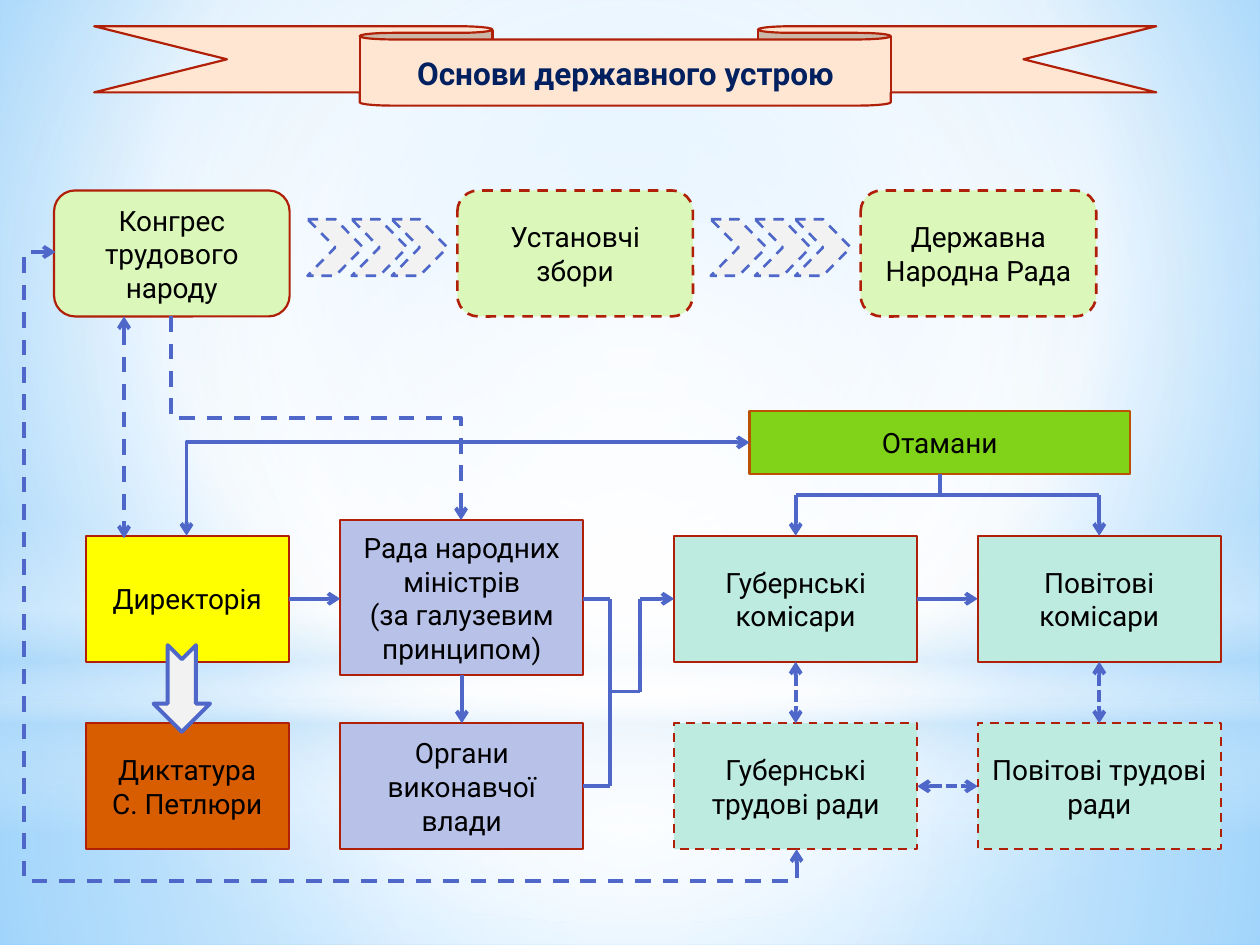
from dataclasses import dataclass
from typing import NamedTuple

from lxml import etree
from pptx import Presentation
from pptx.dml.color import RGBColor
from pptx.enum import dml, shapes, text
from pptx.oxml import ns
from pptx.util import Cm, Pt

FONT = "Roboto"
BLACK = RGBColor(0x00, 0x00, 0x00)
NAVY = RGBColor(0x00, 0x20, 0x60)
RED = RGBColor(0xB0, 0x1F, 0x07)
RUST = RGBColor(0xBB, 0x52, 0x03)
BLUE = RGBColor(0x4E, 0x67, 0xC8)
PEACH = RGBColor(0xFF, 0xE6, 0xD3)
LIME = RGBColor(0xDC, 0xF7, 0xBA)
GREEN = RGBColor(0x81, 0xD3, 0x1A)
YELLOW = RGBColor(0xFF, 0xFF, 0x00)
ORANGE = RGBColor(0xD8, 0x5C, 0x00)
LILAC = RGBColor(0xB8, 0xC2, 0xE9)
MINT = RGBColor(0xBE, 0xEB, 0xDF)
GREY = RGBColor(0xF2, 0xF2, 0xF2)
WHITE = RGBColor(0xFF, 0xFF, 0xFF)
ICE = RGBColor(0xB4, 0xDC, 0xFA)
SKY = RGBColor(0x9E, 0xD5, 0xFF)
AZURE = RGBColor(0x5B, 0xB9, 0xFF)

FORM = shapes.MSO_SHAPE
RECT, ROUND = FORM.RECTANGLE, FORM.ROUNDED_RECTANGLE
DASH, DOTS = dml.MSO_LINE.DASH, dml.MSO_LINE.SQUARE_DOT
MID = (50, 50, 50, 50)

# Chart grid, in cm
TOP, STEP = 3.84, 8.13
COLS = (1.73, 6.86, 13.59, 19.71)
ROWS = (10.8, 14.58)
WIDE, HIGH = 4.9, 2.54
MIDS = [x + WIDE / 2 for x in COLS]
ROW1, ROW2 = [y + HIGH / 2 for y in ROWS]
FORK = 9.98
JOIN, RISE, MERGE = 12.29, 12.9, 13.94


class Stop(NamedTuple):
    at: int
    color: RGBColor
    alpha: int = 100


@dataclass
class Box:
    words: str
    place: tuple
    fill: RGBColor
    form: int = RECT
    line: RGBColor = RED
    width: float = 1.25
    dash: int | None = None


@dataclass
class Link:
    start: tuple
    end: tuple
    ends: str = ""
    dash: int | None = None


@dataclass
class Elbow:
    """A bent link; place is its frame before it is turned."""
    kind: str
    place: tuple
    turn: int
    flip: str
    ends: str
    dash: int | None = None
    bends: tuple = ()


def blend(fill, root, stops: list, focus: tuple | None) -> None:
    """Give a fill a round gradient, or one that runs down if focus is None."""
    fill.solid()
    old = root.find(".//" + ns.qn("a:solidFill"))
    grad = etree.Element(ns.qn("a:gradFill"), rotWithShape="1")
    row = etree.SubElement(grad, ns.qn("a:gsLst"))
    for stop in stops:
        mark = etree.SubElement(row, ns.qn("a:gs"), pos=str(stop.at * 1000))
        tint = etree.SubElement(mark, ns.qn("a:srgbClr"), val=str(stop.color))
        if stop.alpha < 100:
            etree.SubElement(tint, ns.qn("a:alpha"), val=str(stop.alpha * 1000))
    if focus is None:
        etree.SubElement(grad, ns.qn("a:lin"), ang="5400000", scaled="0")
    else:
        way = etree.SubElement(grad, ns.qn("a:path"), path="circle")
        sides = {k: str(v * 1000) for k, v in zip("ltrb", focus)}
        etree.SubElement(way, ns.qn("a:fillToRect"), **sides)
    old.getparent().replace(old, grad)


def write(shape, words: str, size=16, color=BLACK, bold=False) -> None:
    frame = shape.text_frame
    frame.word_wrap = True
    frame.vertical_anchor = text.MSO_ANCHOR.MIDDLE
    frame.text = words
    for para in frame.paragraphs:
        para.alignment = text.PP_ALIGN.CENTER
        for run in para.runs:
            font = run.font
            font.name, font.size, font.bold = FONT, Pt(size), bold
            font.color.rgb = color


def stroke(line, color: RGBColor, width: float, dash=None) -> None:
    line.color.rgb = color
    line.width = Pt(width)
    if dash is not None:
        line.dash_style = dash


def add_box(slide, box: Box):
    shape = slide.shapes.add_shape(box.form, *map(Cm, box.place))
    shape.shadow.inherit = False
    shape.fill.solid()
    shape.fill.fore_color.rgb = box.fill
    stroke(shape.line, box.line, box.width, box.dash)
    if box.words:
        write(shape, box.words)
    return shape


def add_glow(slide, form, place: tuple, stops: list, focus=MID) -> None:
    shape = slide.shapes.add_shape(form, *map(Cm, place))
    shape.shadow.inherit = False
    shape.line.fill.background()
    blend(shape.fill, shape._element.spPr, stops, focus)


def add_link(slide, link: Link, kind=shapes.MSO_CONNECTOR.STRAIGHT):
    wire = slide.shapes.add_connector(kind, *map(Cm, link.start + link.end))
    stroke(wire.line, BLUE, 2.25, link.dash)
    line = wire.line._get_or_add_ln()
    for end in ("head", "tail"):
        if end in link.ends:
            etree.SubElement(line, ns.qn(f"a:{end}End"), type="arrow")
    etree.SubElement(wire._element.spPr, ns.qn("a:effectLst"))
    return wire


def add_elbow(slide, bend: Elbow) -> None:
    x, y, w, h = bend.place
    link = Link((x, y), (x + w, y + h), bend.ends, bend.dash)
    wire = add_link(slide, link, shapes.MSO_CONNECTOR.ELBOW)
    props = wire._element.spPr
    frame = props.find(ns.qn("a:xfrm"))
    frame.set("rot", str(bend.turn * 60000))
    frame.set(bend.flip, "1")
    geom = props.find(ns.qn("a:prstGeom"))
    geom.set("prst", bend.kind)
    guides = geom.find(ns.qn("a:avLst"))
    for n, value in enumerate(bend.bends, 1):
        etree.SubElement(guides, ns.qn("a:gd"), name=f"adj{n}", fmla=f"val {value}")


def add_ground(slide) -> None:
    blend(slide.background.fill, slide._element,
          [Stop(0, SKY), Stop(60, WHITE), Stop(100, AZURE)], (20, 10, 20, 60))
    add_glow(slide, RECT, (0, 14.17, 25.4, 4.88),
             [Stop(0, WHITE, 91), Stop(37, WHITE, 76), Stop(100, ICE, 79)])
    add_glow(slide, RECT, (0, 0, 25.4, 14.17),
             [Stop(0, WHITE, 89), Stop(48, WHITE, 62), Stop(100, ICE, 79)])
    add_glow(slide, RECT, (0, 10.46, 25.4, 6.35),
             [Stop(0, WHITE, 0), Stop(29, WHITE, 30), Stop(45, ICE, 40),
              Stop(55, WHITE, 26), Stop(65, ICE, 60), Stop(100, WHITE, 0)], None)
    add_glow(slide, FORM.OVAL, (0, 4.45, 25.4, 14.17),
             [Stop(0, WHITE), Stop(56, WHITE, 0)])


def add_title(slide) -> None:
    add_box(slide, Box("", (1.9, 0.53, 21.41, 1.6), PEACH, FORM.DOWN_RIBBON))
    title = slide.shapes.title
    title.left, title.top, title.width, title.height = map(Cm, (7.26, 0.8, 10.7, 1.33))
    write(title, "Основи державного устрою", size=18, color=NAVY, bold=True)
    slide.shapes._spTree.append(title._element)  # in front of the ribbon


BODIES = ("Конгрес трудового народу", "Установчі збори", "Державна Народна Рада")
BOXES = [
    Box(words, (1.09 + i * STEP, TOP, 4.75, HIGH), LIME, ROUND,
        width=1.5 if i else 1.25, dash=DASH if i else None)
    for i, words in enumerate(BODIES)
] + [
    Box("", (x + i * STEP, 4.42, 1.12, 1.14), GREY, FORM.CHEVRON, BLUE, 1.5, DASH)
    for i in range(2) for x in (6.2, 7.09, 7.9)
] + [
    Box("Директорія", (COLS[0], ROWS[0], 4.09, HIGH), YELLOW),
    Box("Диктатура\nС. Петлюри", (COLS[0], ROWS[1], 4.09, HIGH), ORANGE),
    Box("Рада народних міністрів\n(за галузевим принципом)",
        (COLS[1], 10.49, WIDE, 3.12), LILAC),
    Box("Органи виконавчої влади", (COLS[1], ROWS[1], WIDE, HIGH), LILAC),
    Box("Отамани", (15.11, 8.28, 7.67, 1.27), GREEN, line=RUST),
] + [
    Box(f"{area} {name}", (x, y, WIDE, HIGH), MINT, dash=dash)
    for y, name, dash in zip(ROWS, ("комісари", "трудові ради"), (None, DASH))
    for x, area in zip(COLS[2:], ("Губернські", "Повітові"))
]

LINKS = [
    Link((5.82, ROW1), (COLS[1], ROW1), "tail"),
    Link((COLS[2] + WIDE, ROW1), (COLS[3], ROW1), "tail"),
    Link((COLS[2] + WIDE, ROW2), (COLS[3], ROW2), "head tail", DOTS),
    Link((18.95, 9.55), (18.95, FORK)),
    Link((MIDS[2], FORK), (MIDS[3], FORK)),
    Link((2.5, TOP + HIGH), (2.5, 10.85), "head tail", DASH),
    Link((MIDS[1], 13.61), (MIDS[1], ROWS[1]), "tail"),
    Link((JOIN, ROW1), (JOIN, ROW2)),
    Link((JOIN, MERGE), (RISE, MERGE)),
    Link((RISE, MERGE), (RISE, ROW1)),
    Link((RISE, ROW1), (COLS[2], ROW1), "tail"),
]
LINKS += [Link((COLS[1] + WIDE, y), (JOIN, y)) for y in (ROW1, ROW2)]
for mid in MIDS[2:]:
    LINKS += [Link((mid, FORK), (mid, ROWS[0]), "tail"),
              Link((mid, ROWS[0] + HIGH), (mid, ROWS[1]), "head tail", DOTS)]

ELBOWS = [
    Elbow("bentConnector2", (3.76, 8.92, 11.35, 1.88), 180, "flipV", "head tail"),
    Elbow("bentConnector4", (2.57, 3.63, 12.04, 14.94), 90, "flipH", "head tail",
          DASH, (-5300, 104200)),
    Elbow("bentConnector3", (4.32, 5.51, 4.11, 5.84), 270, "flipH", "tail", DASH),
]


def main() -> None:
    deck = Presentation()
    deck.slide_width, deck.slide_height = Cm(25.4), Cm(19.05)
    slide = deck.slides.add_slide(deck.slide_layouts[5])
    add_ground(slide)
    add_title(slide)
    for box in BOXES:
        add_box(slide, box)
    for link in LINKS:
        add_link(slide, link)
    for bend in ELBOWS:
        add_elbow(slide, bend)
    arrow = add_box(slide, Box("", (2.79, 13.31, 1.75, 1.14), GREY,
                               FORM.NOTCHED_RIGHT_ARROW, BLUE, 2.25))
    arrow.rotation = 90
    deck.save("out.pptx")


if __name__ == "__main__":
    main()
